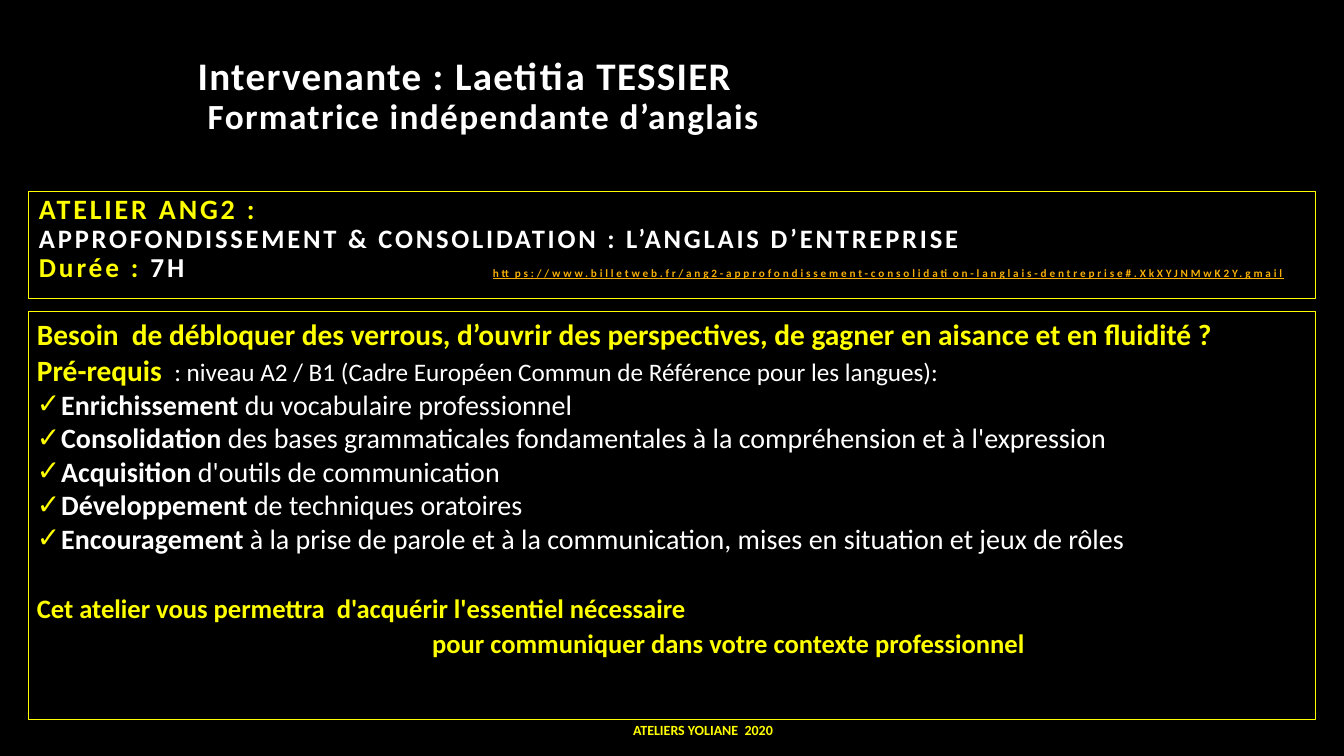
import pptx
import pptx.dml.color
import pptx.enum.text
import pptx.oxml.ns
import pptx.util
import lxml.etree

THEME = {
    "font": "Calibri",
    "black": "000000", "white": "FFFFFF", "yellow": "FFFF00", "orange": "F8B004",
    "name": 27.9, "role": 25.2,
    "workshop": 20, "subject": 19, "duration": 19.5, "link": 8,
    "question": 21, "level": 18, "goal": 20, "closing": 19, "footer": 10,
    "border": 0.75,
}

presentation = pptx.Presentation()
presentation.slide_width = pptx.util.Inches(13.33)
presentation.slide_height = pptx.util.Inches(7.5)
slide = presentation.slides.add_slide(presentation.slide_layouts[3])
slide.background.fill.solid()
slide.background.fill.fore_color.rgb = pptx.dml.color.RGBColor.from_string(THEME["black"])


def place(shape, left, top, width, height):
    """Set a shape by percentages of the slide and prepare its text frame."""
    shape.left = int(presentation.slide_width * left / 100)
    shape.top = int(presentation.slide_height * top / 100)
    shape.width = int(presentation.slide_width * width / 100)
    shape.height = int(presentation.slide_height * height / 100)
    frame = shape.text_frame
    frame.word_wrap = True
    frame.auto_size = pptx.enum.text.MSO_AUTO_SIZE.NONE
    frame.vertical_anchor = pptx.enum.text.MSO_ANCHOR.TOP
    return frame


def write(frame, runs, line_spacing=1.0, before=0, indent=0, check=False, spacing=0,
          align=pptx.enum.text.PP_ALIGN.LEFT):
    """Write one paragraph; each run is (text, size, colour, bold[, underline])."""
    paragraph = frame.paragraphs[0]
    if paragraph.runs:
        paragraph = frame.add_paragraph()
    properties = paragraph._p.get_or_add_pPr()
    margin = pptx.util.Inches(indent)
    properties.set("marL", str(margin))
    properties.set("indent", str(-margin if check else 0))
    qualified = pptx.oxml.ns.qn
    if check:
        bullet_colour = lxml.etree.SubElement(properties, qualified("a:buClr"))
        lxml.etree.SubElement(bullet_colour, qualified("a:srgbClr"), val=THEME["yellow"])
        lxml.etree.SubElement(properties, qualified("a:buChar"), char="✓")
    else:
        lxml.etree.SubElement(properties, qualified("a:buNone"))
    paragraph.alignment = align
    paragraph.line_spacing = line_spacing
    paragraph.space_before = pptx.util.Pt(before)
    paragraph.space_after = pptx.util.Pt(0)
    for text, size, colour, bold, *underline in runs:
        run = paragraph.add_run()
        run.text = text
        run.font.name = THEME["font"]
        run.font.size = pptx.util.Pt(THEME[size])
        run.font.color.rgb = pptx.dml.color.RGBColor.from_string(THEME[colour])
        run.font.bold = bold
        if underline:
            run.font.underline = True
        if spacing:
            run._r.get_or_add_rPr().set("spc", str(spacing * 100))


title, workshop, content = slide.placeholders

# Speaker
title_frame = place(title, 13.95, 6.8, 75, 12)
write(title_frame, [("Intervenante : Laetitia TESSIER", "name", "white", True)], 0.9, spacing=1)
write(title_frame, [("Formatrice indépendante d’anglais", "role", "white", True)],
      0.9, indent=0.1, spacing=1)

# Framed panels share the same left edge and width
workshop_frame = place(workshop, 2.15, 25.3, 95.75, 14.2)
workshop_frame.margin_top = pptx.util.Inches(0.04)
content_frame = place(content, 2.15, 41.2, 95.75, 54)
content_frame.margin_left = pptx.util.Inches(0.08)
for panel in (workshop, content):
    panel.line.color.rgb = pptx.dml.color.RGBColor.from_string(THEME["yellow"])
    panel.line.width = pptx.util.Pt(THEME["border"])

# Workshop name and duration
workshop_lines = [
    [("ATELIER ANG2 :", "workshop", "yellow", True)],
    [("APPROFONDISSEMENT & CONSOLIDATION : L’ANGLAIS D’ENTREPRISE", "subject", "white", True)],
    [("Durée :", "duration", "yellow", True), (" 7H", "duration", "white", True)],
]
for line in workshop_lines:
    write(workshop_frame, line, 0.9, spacing=2)

# Booking link, level with the duration
link = ("https://www.billetweb.fr/ang2-approfondissement-consolidation-"
        "langlais-dentreprise#.XkXYJNMwK2Y.gmail")
link_frame = place(slide.shapes.add_textbox(0, 0, 0, 0), 35.93, 34.53, 61.5, 3.2)
write(link_frame, [(link, "link", "orange", True, True)], spacing=2)

# Need and required level
write(content_frame, [("Besoin  de débloquer des verrous, d’ouvrir des perspectives, "
                       "de gagner en aisance et en fluidité ?", "question", "yellow", True)])
write(content_frame, [
    ("Pré-requis ", "question", "yellow", True),
    (" : niveau A2 / B1 (Cadre Européen Commun de Référence pour les langues):",
     "level", "white", False),
])

# Goals
goals = [
    ("Enrichissement", " du vocabulaire professionnel"),
    ("Consolidation", " des bases grammaticales fondamentales à la compréhension et à l'expression"),
    ("Acquisition", " d'outils de communication"),
    ("Développement", " de techniques oratoires"),
    ("Encouragement", " à la prise de parole et à la communication, "
                      "mises en situation et jeux de rôles"),
]
for goal, detail in goals:
    write(content_frame, [(goal, "goal", "white", True), (detail, "goal", "white", False)],
          indent=0.24, check=True)

# Closing promise, second line stepped to the right
write(content_frame, [("Cet atelier vous permettra  d'acquérir l'essentiel nécessaire",
                       "closing", "yellow", True)], 1.1, before=24)
write(content_frame, [("pour communiquer dans votre contexte professionnel",
                       "closing", "yellow", True)], 1.1, indent=3.92)

# Footer
footer_frame = place(slide.shapes.add_textbox(0, 0, 0, 0), 17.5, 95.2, 69.6, 3.2)
write(footer_frame, [("ATELIERS YOLIANE  2020", "footer", "yellow", True)], 0.8,
      align=pptx.enum.text.PP_ALIGN.CENTER)

presentation.save("out.pptx")
